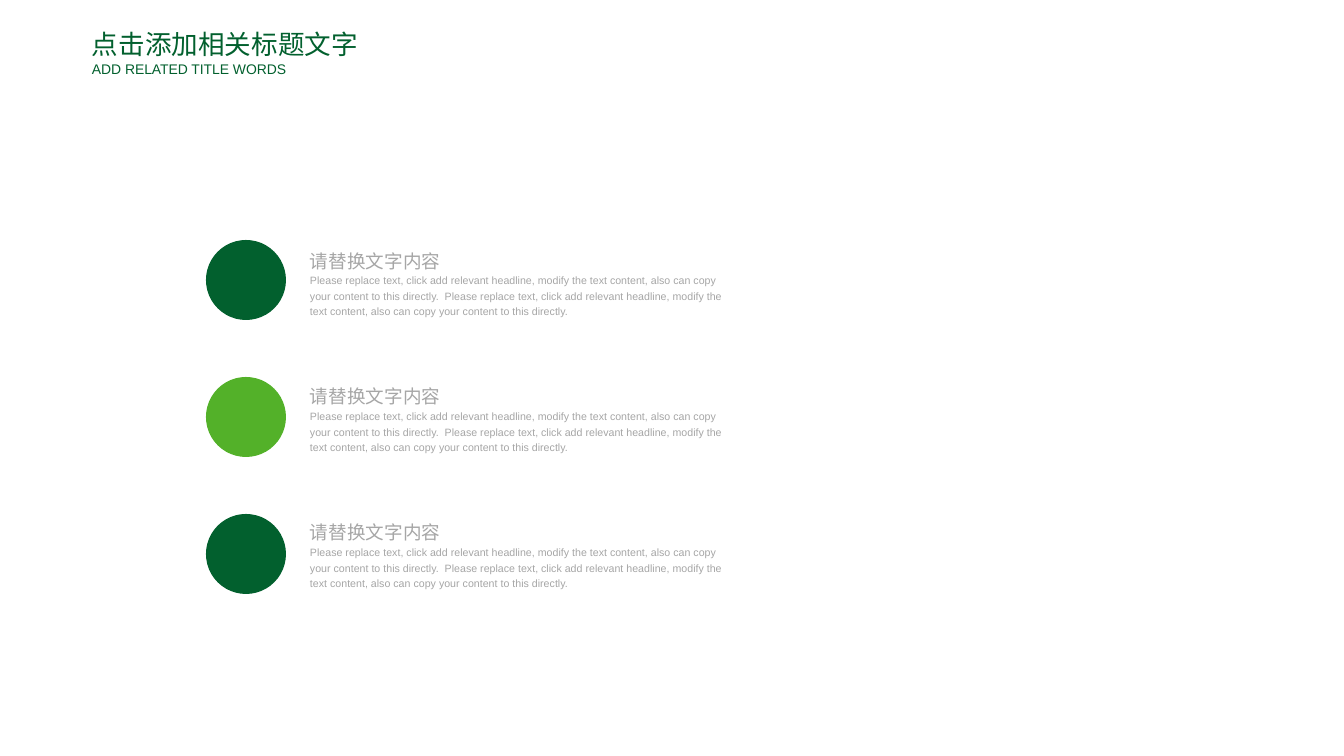
from pptx import Presentation
from pptx.dml.color import RGBColor
from pptx.enum.shapes import MSO_SHAPE
from pptx.enum.text import MSO_AUTO_SIZE
from pptx.util import Pt

SCALE = 9565  # EMU per px
FOREST = RGBColor(0x02, 0x60, 0x2E)
LEAF = RGBColor(0x53, 0xB1, 0x29)
GRAY = RGBColor(0xA6, 0xA6, 0xA6)

HEAD = "请替换文字内容"
BODY = (
    "Please replace text, click add relevant headline, modify the text content, "
    "also can copy your content to this directly.  "
    "Please replace text, click add relevant headline, modify the text content, "
    "also can copy your content to this directly."
)


def px(*sizes):
    return [size * SCALE for size in sizes]


def write(par, text, size, color, font="Arial", spacing=None):
    run = par.add_run()
    run.text = text
    run.font.name = font
    run.font.size = Pt(size)
    run.font.color.rgb = color
    if spacing:
        par.line_spacing = spacing


class Deck:
    def __init__(self, width, height):
        self.show = Presentation()
        self.show.slide_width, self.show.slide_height = px(width, height)
        self.slide = self.show.slides.add_slide(self.show.slide_layouts[6])

    def disc(self, left, top, size, color):
        shape = self.slide.shapes.add_shape(MSO_SHAPE.OVAL, *px(left, top, size, size))
        shape.shadow.inherit = False
        shape.fill.solid()
        shape.fill.fore_color.rgb = color
        shape.line.fill.background()

    def text(self, left, top, width, height, lines, color, wrap=True, spacing=None):
        frame = self.slide.shapes.add_textbox(*px(left, top, width, height)).text_frame
        frame.margin_left = frame.margin_right = 0
        frame.margin_top = frame.margin_bottom = 0
        frame.word_wrap = wrap
        frame.auto_size = MSO_AUTO_SIZE.SHAPE_TO_FIT_TEXT
        for row, (words, size) in enumerate(lines):
            par = frame.add_paragraph() if row else frame.paragraphs[0]
            write(par, words, size, color, spacing=spacing)


def main():
    deck = Deck(1344, 756)

    # Title and subtitle
    deck.text(92, 28, 268, 32, [("点击添加相关标题文字", 20)], FOREST, wrap=False)
    deck.text(92, 61, 199, 17, [("ADD RELATED TITLE WORDS", 10.5)], FOREST, wrap=False)

    # Three items, each a disc with its text
    for row, color in enumerate((FOREST, LEAF, FOREST)):
        deck.disc(206, 240 + 137 * row, 80, color)
        deck.text(310, 245 + 136 * row, 415, 74, [(HEAD, 14), (BODY, 8)], GRAY, spacing=1.2)

    deck.show.save("out.pptx")


if __name__ == "__main__":
    main()
